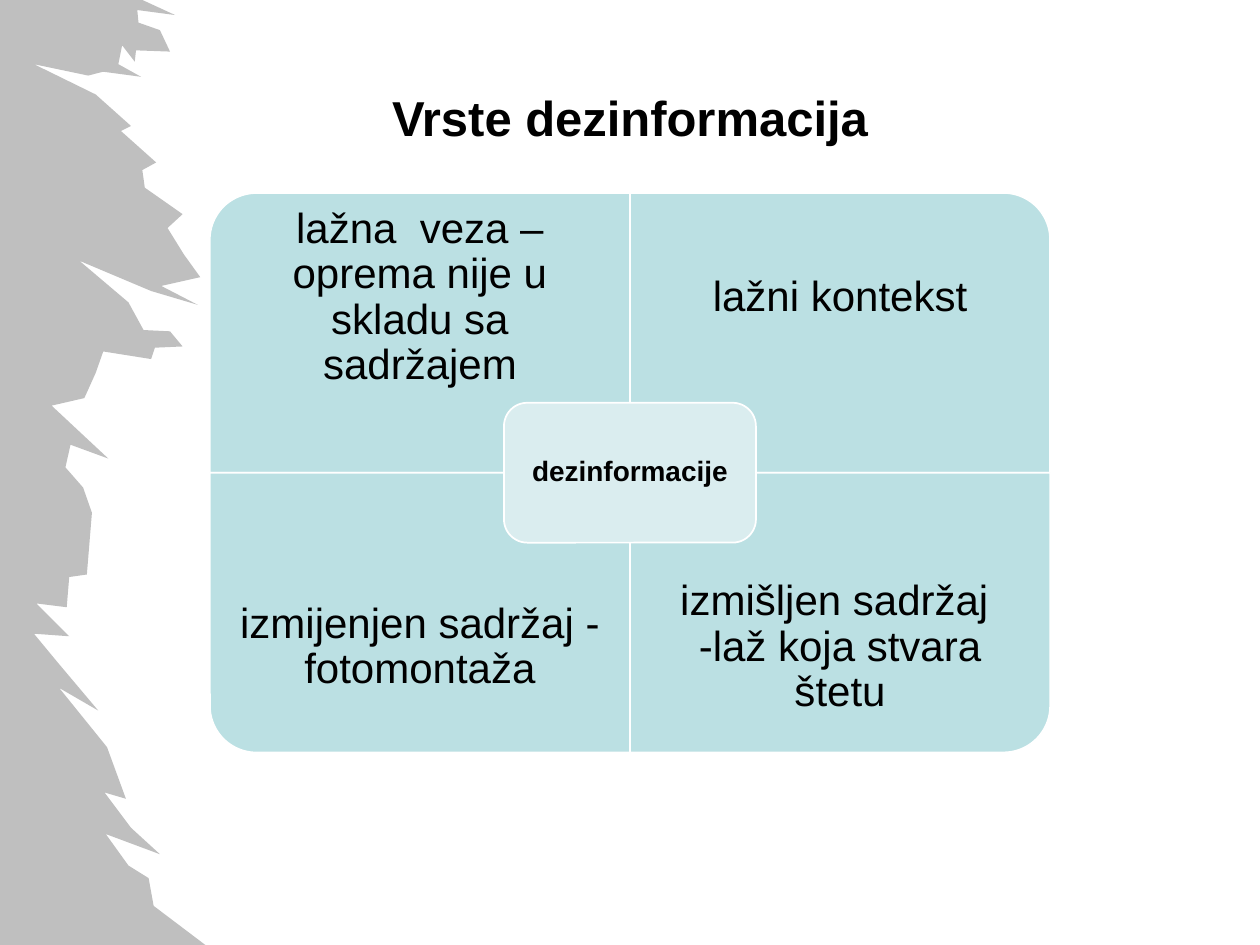
from lxml import etree
from pptx import Presentation
from pptx.dml.color import RGBColor
from pptx.enum.shapes import MSO_SHAPE
from pptx.enum.text import MSO_ANCHOR, PP_ALIGN
from pptx.oxml.ns import qn
from pptx.util import Cm, Pt

CORNER = MSO_SHAPE.ROUND_1_RECTANGLE
ROUND = MSO_SHAPE.ROUNDED_RECTANGLE
MIDDLE = MSO_ANCHOR.MIDDLE
CENTER = PP_ALIGN.CENTER

COLORS = {"edge": "808080", "tile": "BBE0E3", "hub": "DAEDEF", "line": "FFFFFF", "text": "000000"}


def write(shape, text, size=24, bold=False, inset=0.48, space=0.9):
    frame = shape.text_frame
    frame.word_wrap = True
    frame.vertical_anchor = MIDDLE
    frame.margin_left = frame.margin_right = Cm(inset)
    frame.margin_top = frame.margin_bottom = Cm(inset)
    para = frame.paragraphs[0]
    para.text = text
    para.alignment = CENTER
    para.line_spacing = space
    font = para.runs[0].font
    font.name = "Arial"
    font.size = Pt(size)
    font.bold = bold
    font.color.rgb = RGBColor.from_string(COLORS["text"])


def block(kind, x, y, w, h, color):
    shape = slide.shapes.add_shape(kind, Cm(x), Cm(y), Cm(w), Cm(h))
    shape.shadow.inherit = False
    shape.fill.solid()
    shape.fill.fore_color.rgb = RGBColor.from_string(COLORS[color])
    shape.line.color.rgb = RGBColor.from_string(COLORS["line"])
    shape.line.width = Pt(1)
    return shape


deck = Presentation()
deck.slide_width, deck.slide_height = Cm(25.4), Cm(19.05)
slide = deck.slides.add_slide(deck.slide_layouts[5])

SPOTS = [
    (113, 0), (139, 12), (109, 8), (110, 18), (127, 24), (135, 41), (108, 40),
    (107, 49), (97, 36), (94, 51), (112, 61), (82, 57), (70, 60), (27, 51),
    (76, 75), (104, 100), (96, 104), (124, 129), (113, 135), (115, 149),
    (145, 170), (133, 181), (146, 202), (159, 220), (128, 227), (157, 242),
    (120, 231), (63, 207), (102, 240), (114, 262), (135, 263), (145, 275),
    (123, 276), (120, 285), (82, 279), (76, 296), (67, 316), (41, 322),
    (86, 364), (56, 353), (52, 371), (66, 387), (73, 407), (69, 456),
    (55, 458), (53, 482), (29, 479), (55, 505), (27, 503), (46, 526),
    (78, 564), (47, 546), (85, 593), (100, 634), (83, 629), (104, 657),
    (127, 678), (84, 662), (102, 687), (118, 697), (122, 719), (163, 750),
    (0, 750),
]
pen = slide.shapes.build_freeform(0, 0, scale=Cm(2.54) / 100)
pen.add_line_segments(SPOTS, close=True)
edge = pen.convert_to_shape()
edge.shadow.inherit = False
edge.fill.solid()
edge.fill.fore_color.rgb = RGBColor.from_string(COLORS["edge"])
tint = edge.element.spPr.find(".//" + qn("a:srgbClr"))
etree.SubElement(tint, qn("a:alpha")).set("val", "50000")
edge.line.fill.background()

title = slide.shapes.title
title.left, title.top, title.width, title.height = Cm(1.27), Cm(0.76), Cm(22.86), Cm(3.18)
write(title, "Vrste dezinformacija", size=28, bold=True, inset=0.25, space=1)
edge.element.addnext(title.element)

LEFT, TOP, WIDE, HIGH, DEEP = 4.23, 3.89, 8.47, 5.64, 4.23
TILES = [
    (0, 0, 270, "lažna  veza – oprema nije u skladu sa sadržajem"),
    (1, 0, 0, "lažni kontekst"),
    (0, 1, 180, "izmijenjen sadržaj - fotomontaža"),
    (1, 1, 90, "izmišljen sadržaj  -laž koja stvara štetu"),
]
for col, row, turn, text in TILES:
    x, y = LEFT + col * WIDE, TOP + row * HIGH
    w, h = (HIGH, WIDE) if turn % 180 else (WIDE, HIGH)
    tile = block(CORNER, x + (WIDE - w) / 2, y + (HIGH - h) / 2, w, h, "tile")
    tile.rotation = turn
    label = slide.shapes.add_textbox(Cm(x), Cm(y + row * (HIGH - DEEP)), Cm(WIDE), Cm(DEEP))
    write(label, text)

hub = block(ROUND, 10.16, 8.12, 5.08, 2.82, "hub")
write(hub, "dezinformacije", size=16, bold=True, inset=0.3)

deck.save("out.pptx")
